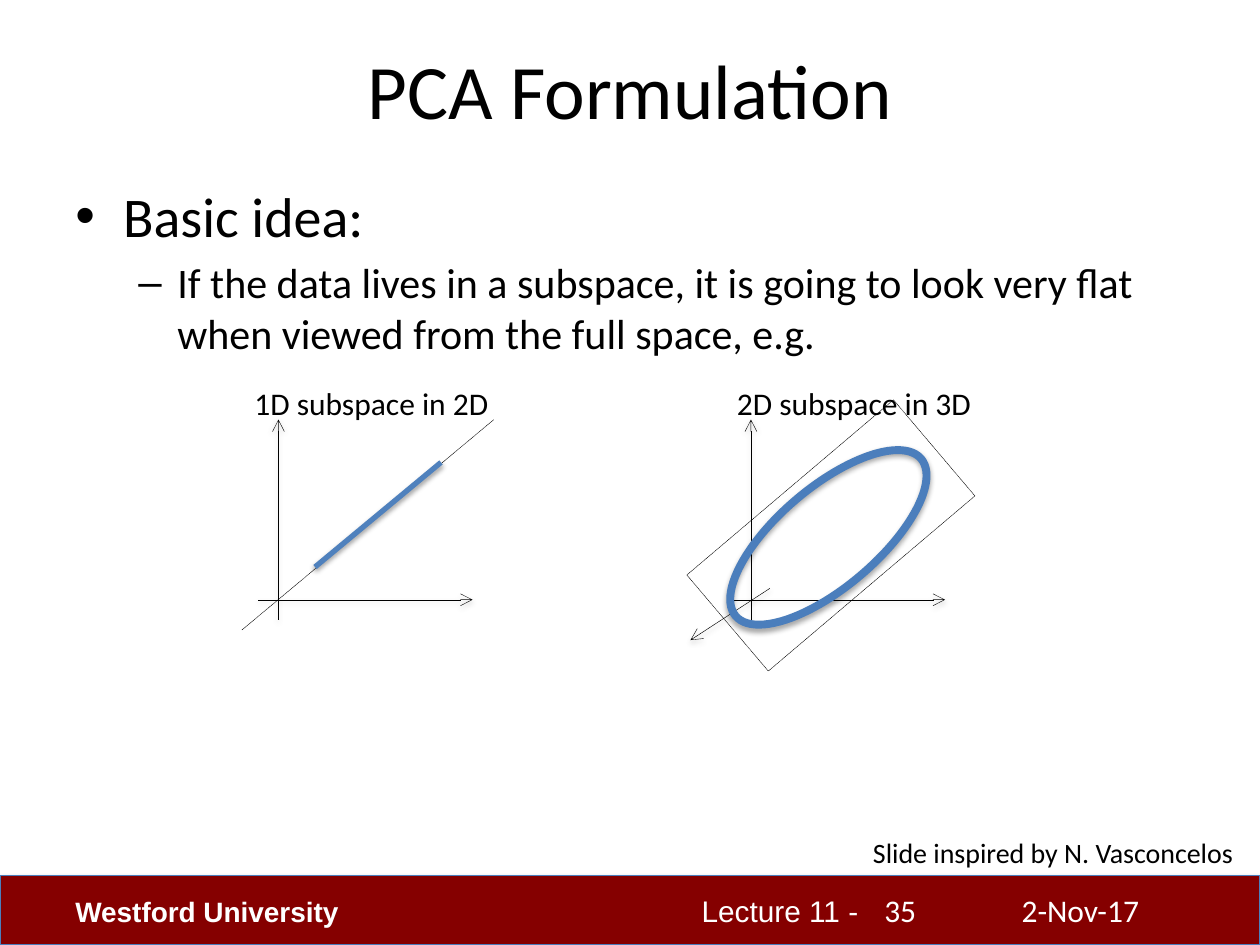
"""Build the PCA formulation slide with its two subspace diagrams."""
import dataclasses

import lxml.etree
import pptx
import pptx.dml.color
import pptx.enum.dml
import pptx.enum.shapes
import pptx.enum.text
import pptx.oxml.ns
import pptx.util

Inches = pptx.util.Inches
Pt = pptx.util.Pt
Shape = pptx.enum.shapes.MSO_SHAPE
Align = pptx.enum.text.PP_ALIGN
Anchor = pptx.enum.text.MSO_ANCHOR
qn = pptx.oxml.ns.qn


@dataclasses.dataclass(frozen=True)
class Theme:
    body_font: str = "Calibri"
    footer_font: str = "Arial"
    ink: str = "000000"
    paper: str = "FFFFFF"
    band: str = "850000"
    outline: str = "4B7EBC"
    accent: str = "4F81BD"
    title: float = 44
    bullet: float = 32
    sub_bullet: float = 24
    label: float = 18
    lecture: float = 17
    small: float = 16
    hairline: float = 0.25


class SlideBuilder:
    def __init__(self, slide, theme):
        self.slide = slide
        self.theme = theme

    def color(self, value):
        return pptx.dml.color.RGBColor.from_string(value)

    def box(self, left, top, width, height):
        return [Inches(length) for length in (left, top, width, height)]

    def stroke(self, line, color, width, dashed):
        line.color.rgb = self.color(color)
        line.width = Pt(width)
        if dashed:
            line.dash_style = pptx.enum.dml.MSO_LINE.SQUARE_DOT

    def effects(self, item, shadow, distance, opacity):
        effects = lxml.etree.SubElement(item._element.spPr, qn("a:effectLst"))
        if shadow:
            outer = lxml.etree.SubElement(
                effects, qn("a:outerShdw"), blurRad=str(Pt(3.1)),
                dist=str(Pt(distance)), dir="5400000", rotWithShape="0")
            black = lxml.etree.SubElement(outer, qn("a:srgbClr"), val=self.theme.ink)
            lxml.etree.SubElement(black, qn("a:alpha"), val=str(opacity * 1000))

    def shape(self, kind, place, color, width, fill=None, rotation=0,
              dashed=False, shadow=True):
        shape = self.slide.shapes.add_shape(kind, *self.box(*place))
        shape.rotation = rotation
        if fill:
            shape.fill.solid()
            shape.fill.fore_color.rgb = self.color(fill)
        else:
            shape.fill.background()
        self.stroke(shape.line, color, width, dashed)
        self.effects(shape, shadow, 1.8, 35)

    def line(self, start, end, color=None, width=None, arrow=False,
             dashed=False, shadow=True):
        line = self.slide.shapes.add_connector(
            pptx.enum.shapes.MSO_CONNECTOR.STRAIGHT,
            *[Inches(length) for length in (*start, *end)])
        self.stroke(line.line, color or self.theme.ink,
                    width or self.theme.hairline, dashed)
        if arrow:
            lxml.etree.SubElement(line.line._get_or_add_ln(), qn("a:tailEnd"), type="arrow")
        self.effects(line, shadow, 1.6, 38)

    def axes(self, left):
        self.line((left + 0.16, 4.92), (left + 0.16, 3.33), arrow=True)
        self.line((left, 4.76), (left + 1.7, 4.76), arrow=True)

    def frame(self, place, wrap=True, anchor=Anchor.TOP):
        frame = self.slide.shapes.add_textbox(*self.box(*place)).text_frame
        frame.word_wrap = wrap
        frame.vertical_anchor = anchor
        return frame

    def run(self, paragraph, words, size, color=None, font=None, bold=False):
        run = paragraph.add_run()
        run.text = words
        run.font.size = Pt(size)
        run.font.name = font or self.theme.body_font
        run.font.bold = bold
        run.font.color.rgb = self.color(color or self.theme.ink)

    def text(self, place, words, size, wrap=True, anchor=Anchor.TOP,
             align=Align.LEFT, **style):
        paragraph = self.frame(place, wrap, anchor).paragraphs[0]
        paragraph.alignment = align
        self.run(paragraph, words, size, **style)

    def bullets(self, place, items):
        frame = self.frame(place)
        for level, (mark, words, size, margin, hanging) in enumerate(items):
            paragraph = frame.add_paragraph() if level else frame.paragraphs[0]
            paragraph.level = level
            paragraph.space_before = Pt(size * 0.2)
            properties = paragraph._p.get_or_add_pPr()
            properties.set("marL", str(Inches(margin)))
            properties.set("indent", str(-Inches(hanging)))
            lxml.etree.SubElement(properties, qn("a:buFont"), typeface="Arial")
            lxml.etree.SubElement(properties, qn("a:buChar"), char=mark)
            self.run(paragraph, words, size)


def main():
    theme = Theme()
    deck = pptx.Presentation()
    deck.slide_width, deck.slide_height = Inches(10), Inches(7.5)
    page = SlideBuilder(deck.slides.add_slide(deck.slide_layouts[6]), theme)

    page.shape(Shape.RECTANGLE, (0, 6.95, 10, 0.55), theme.outline, 0.75, fill=theme.band)
    page.text((5.47, 7.04, 2.44, 0.4), "Lecture 11 -", theme.lecture,
              color=theme.paper, font=theme.footer_font)
    page.text((0.5, 7.05, 2.67, 0.37), "Westford University", theme.small,
              color=theme.paper, font=theme.footer_font, bold=True)
    page.text((0.5, 0.08, 9, 1.25), "PCA Formulation", theme.title,
              anchor=Anchor.MIDDLE, align=Align.CENTER)
    page.bullets((0.5, 1.39, 9, 5.2), [
        ("•", "Basic idea:", theme.bullet, 0.38, 0.38),
        ("–", "If the data lives in a subspace, it is going to look very flat "
              "when viewed from the full space, e.g.", theme.sub_bullet, 0.81, 0.31),
    ])
    page.text((8.01, 7.02, 1.74, 0.4), "2-Nov-17", theme.label, color=theme.paper)
    page.text((6.92, 7.02, 1.1, 0.4), "35", theme.label, color=theme.paper)
    page.text((6.83, 6.58, 3.11, 0.37), "Slide inspired by N. Vasconcelos",
              theme.small, wrap=False)

    page.axes(2.05)
    page.line((1.92, 5), (3.92, 3.33), dashed=True, shadow=False)
    page.line((2.5, 4.5), (3.5, 3.67), color=theme.accent, width=3)

    page.axes(5.8)
    page.line((6.11, 4.67), (5.48, 5.08), arrow=True)
    tilt = 319.7
    page.shape(Shape.RECTANGLE, (5.52, 3.75, 2.15, 1), theme.ink, theme.hairline,
               rotation=tilt, dashed=True, shadow=False)
    page.shape(Shape.OVAL, (5.61, 3.87, 1.93, 0.79), theme.outline, 4.5, rotation=tilt)

    for left, caption in ((1.92, "1D subspace in 2D"), (5.75, "2D subspace in 3D")):
        page.text((left, 3, 2.08, 0.4), caption, theme.label, wrap=False)

    deck.save("out.pptx")


if __name__ == "__main__":
    main()
